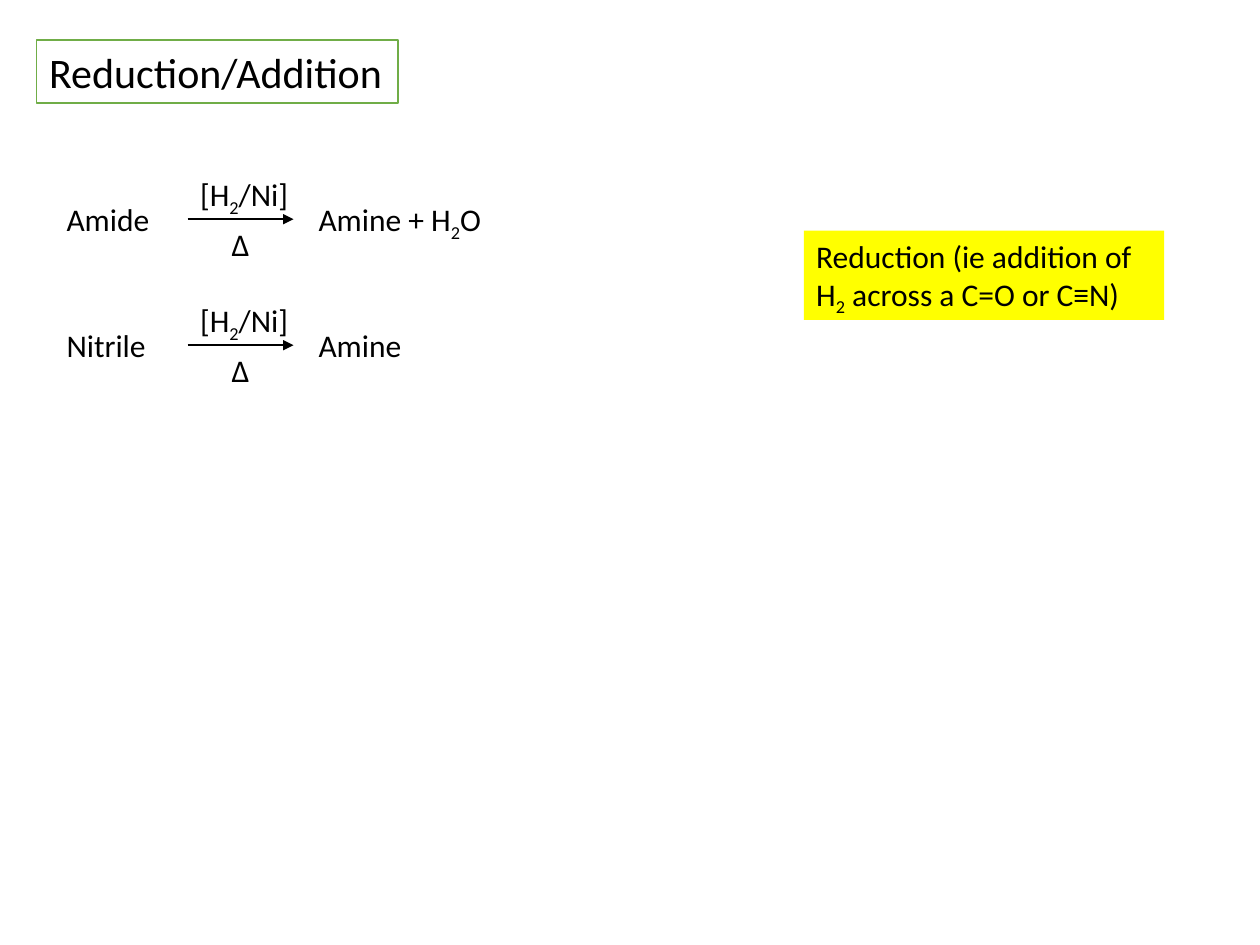
from dataclasses import dataclass

import pptx
import pptx.dml.color
import pptx.enum.shapes
import pptx.enum.text
import pptx.oxml
import pptx.oxml.ns
import pptx.util
from pptx.util import Inches

BLACK = pptx.dml.color.RGBColor(0x00, 0x00, 0x00)
WHITE = pptx.dml.color.RGBColor(0xFF, 0xFF, 0xFF)
GREEN = pptx.dml.color.RGBColor(0x70, 0xAD, 0x47)
YELLOW = pptx.dml.color.RGBColor(0xFF, 0xFF, 0x00)
FIXED = pptx.enum.text.MSO_AUTO_SIZE.NONE
GROW = pptx.enum.text.MSO_AUTO_SIZE.SHAPE_TO_FIT_TEXT
NS = pptx.oxml.ns.nsdecls("a")
PRODUCT_TAB = Inches(2)


@dataclass
class Box:
    left: float
    top: float
    width: float
    height: float
    text: str
    wrap: bool = False
    size: int = 18
    auto_size: pptx.enum.text.MSO_AUTO_SIZE = GROW


@dataclass
class Reaction:
    top: float
    reactant: str
    product: str


TITLE = Box(0.29, 0.32, 2.87, 0.5, "Reduction/Addition", size=24, auto_size=FIXED)
NOTE = Box(6.38, 1.83, 2.86, 0.71,
           "Reduction (ie addition of H_2_ across a C=O or C≡N)", wrap=True)
REACTIONS = [
    Reaction(1.34, "Amide", "Amine + H_2_O"),
    Reaction(2.34, "Nitrile", "Amine"),
]


def set_all(target: object, values: dict) -> None:
    for name, value in values.items():
        setattr(target, name, value)


def place(sp, box: Box) -> None:
    set_all(sp, {name: Inches(getattr(box, name))
                 for name in ("left", "top", "width", "height")})


def write(sp, box: Box):
    tf = sp.text_frame
    set_all(tf, {
        "word_wrap": box.wrap,
        "auto_size": box.auto_size,
        "vertical_anchor": pptx.enum.text.MSO_ANCHOR.TOP,
    })
    p = tf.paragraphs[0]
    p.alignment = pptx.enum.text.PP_ALIGN.LEFT
    for i, part in enumerate(box.text.split("_")):
        r = p.add_run()
        r.text = part
        set_all(r.font, {"name": "Calibri", "size": pptx.util.Pt(box.size)})
        r.font.color.rgb = BLACK
        if i % 2:
            r.font._element.set("baseline", "-25000")
    return p


def add_text(s, box: Box):
    sp = s.shapes.add_textbox(0, 0, 0, 0)
    place(sp, box)
    return write(sp, box)


def add_arrow(s, left: float, right: float, y: float) -> None:
    cx = s.shapes.add_connector(pptx.enum.shapes.MSO_CONNECTOR.STRAIGHT,
                                Inches(left), Inches(y), Inches(right), Inches(y))
    cx.line.color.rgb = BLACK
    cx.line.width = pptx.util.Pt(1)
    cx.line._get_or_add_ln().append(
        pptx.oxml.parse_xml(f'<a:tailEnd {NS} type="triangle"/>'))
    cx._element.spPr.append(pptx.oxml.parse_xml(f"<a:effectLst {NS}/>"))


def add_reaction(s, reaction: Reaction) -> None:
    top = reaction.top
    p = add_text(s, Box(0.43, top + 0.2, 3.54, 0.4,
                        f"{reaction.reactant}\t{reaction.product}", wrap=True))
    p._p.get_or_add_pPr().append(pptx.oxml.parse_xml(
        f'<a:tabLst {NS}><a:tab pos="{PRODUCT_TAB}" algn="l"/></a:tabLst>'))
    add_arrow(s, 1.49, 2.33, top + 0.4)
    add_text(s, Box(1.49, top, 0.92, 0.4, "[H_2_/Ni]"))
    add_text(s, Box(1.74, top + 0.4, 0.34, 0.4, "Δ"))


def add_title(s) -> None:
    sp = s.shapes.title
    place(sp, TITLE)
    sp.fill.solid()
    sp.fill.fore_color.rgb = WHITE
    sp.line.color.rgb = GREEN
    sp.line.width = pptx.util.Pt(1)
    write(sp, TITLE)


def add_note(s) -> None:
    sp = s.shapes.add_shape(pptx.enum.shapes.MSO_SHAPE.RECTANGLE, 0, 0, 0, 0)
    place(sp, NOTE)
    sp.shadow.inherit = False
    sp.fill.solid()
    sp.fill.fore_color.rgb = YELLOW
    sp.line.fill.background()
    write(sp, NOTE)


def main() -> None:
    prs = pptx.Presentation()
    set_all(prs, {"slide_width": Inches(10), "slide_height": Inches(7.5)})
    s = prs.slides.add_slide(prs.slide_layouts[5])
    add_title(s)
    for reaction in REACTIONS:
        add_reaction(s, reaction)
    add_note(s)
    prs.save("out.pptx")


if __name__ == "__main__":
    main()
